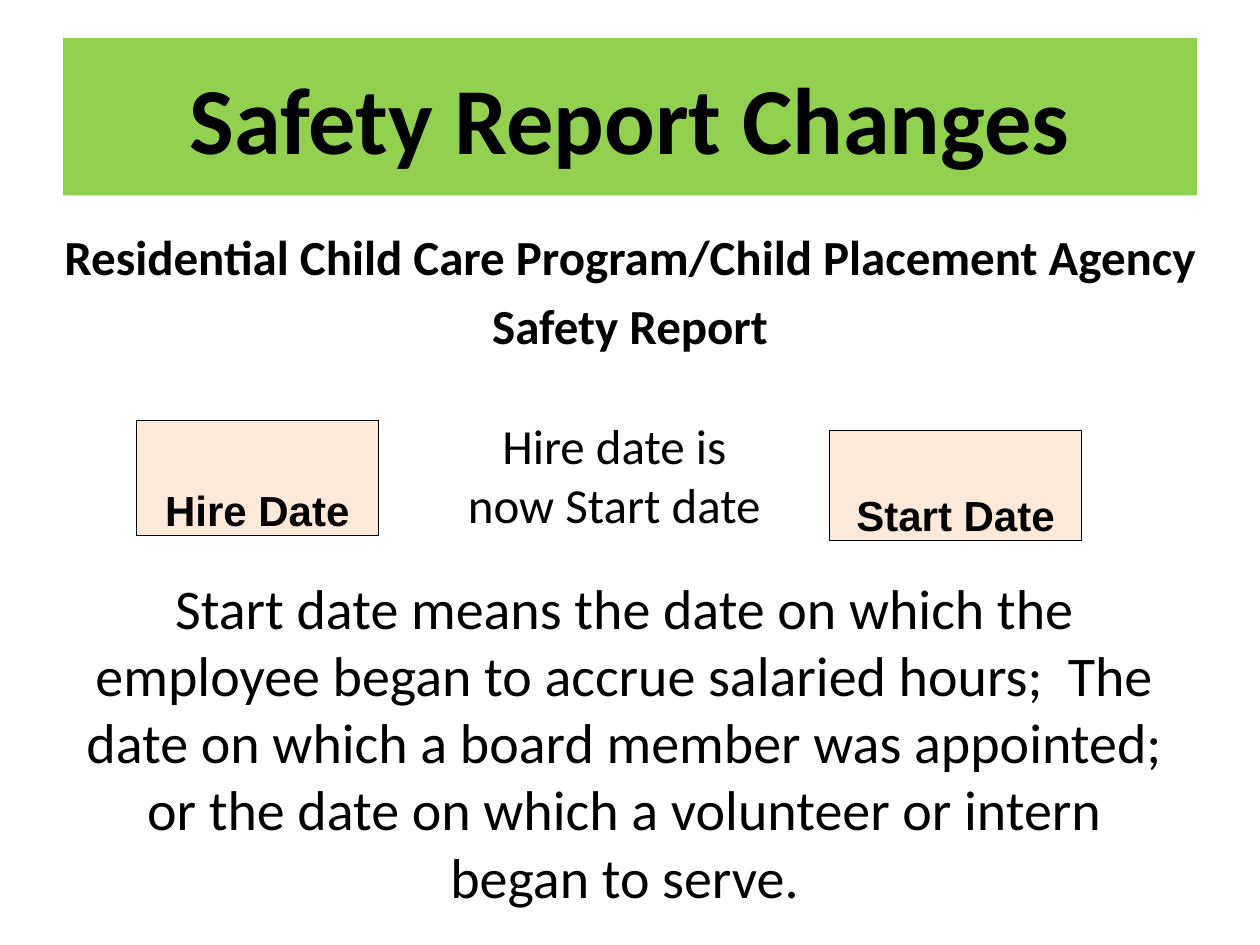
from lxml import etree
from pptx import Presentation
from pptx.dml.color import RGBColor
from pptx.enum.text import MSO_ANCHOR, MSO_AUTO_SIZE, PP_ALIGN
from pptx.oxml.ns import qn
from pptx.util import Inches, Pt

CENTER = PP_ALIGN.CENTER
MIDDLE, BOTTOM = MSO_ANCHOR.MIDDLE, MSO_ANCHOR.BOTTOM
NO_FIT, GROW = MSO_AUTO_SIZE.NONE, MSO_AUTO_SIZE.SHAPE_TO_FIT_TEXT

# Grid of 120 columns by 90 rows
WIDTH, HEIGHT = Inches(10), Inches(7.5)
COL, ROW = WIDTH / 120, HEIGHT / 90

BLACK, GREEN, PEACH = "000000", "92D050", "FDE9D9"
TITLE_FONT = {"name": "Calibri", "size": Pt(54), "bold": True}
HEADING_FONT = {"name": "Calibri", "size": Pt(28), "bold": True}
NOTE_FONT = {"name": "Calibri", "size": Pt(28)}
DEFINITION_FONT = {"name": "Calibri", "size": Pt(32)}
LABEL_FONT = {"name": "Arial", "size": Pt(24), "bold": True}


def rgb(value):
    return RGBColor.from_string(value)


def grid(col, row, cols, rows):
    return round(col * COL), round(row * ROW), round(cols * COL), round(rows * ROW)


def set_fill(target, color):
    target.fill.solid()
    target.fill.fore_color.rgb = rgb(color)


def place(sp, box):
    for name, value in zip(("left", "top", "width", "height"), box):
        setattr(sp, name, value)


def write(tf, lines, font):
    for i, line in enumerate(lines):
        p = tf.paragraphs[0] if i == 0 else tf.add_paragraph()
        p.alignment = CENTER
        r = p.add_run()
        r.text = line
        for name, value in font.items():
            setattr(r.font, name, value)
        r.font.color.rgb = rgb(BLACK)


def add_title(slide, box, text):
    sp = slide.shapes.title
    place(sp, box)
    set_fill(sp, GREEN)
    tf = sp.text_frame
    tf.auto_size, tf.vertical_anchor = NO_FIT, MIDDLE
    write(tf, [text], TITLE_FONT)


def add_heading(slide, box, lines):
    sp = slide.placeholders[1]
    place(sp, box)
    tf = sp.text_frame
    tf.auto_size = NO_FIT
    write(tf, lines, HEADING_FONT)
    for p in tf.paragraphs:
        p.space_before = Pt(5.6)
        pPr = p._p.get_or_add_pPr()
        pPr.set("marL", "0")
        pPr.set("indent", "0")
        etree.SubElement(pPr, qn("a:buNone"))


def add_text(slide, box, text, font):
    tf = slide.shapes.add_textbox(*box).text_frame
    tf.word_wrap, tf.auto_size = True, GROW
    write(tf, [text], font)


def add_borders(cell, color, width):
    tcPr = cell._tc.get_or_add_tcPr()
    for i, side in enumerate(("lnL", "lnR", "lnT", "lnB")):
        ln = etree.Element(qn(f"a:{side}"), w=str(width))
        fill = etree.SubElement(ln, qn("a:solidFill"))
        etree.SubElement(fill, qn("a:srgbClr"), val=color)
        tcPr.insert(i, ln)


def add_label(slide, box, text):
    table = slide.shapes.add_table(1, 1, *box).table
    table.first_row = table.horz_banding = False
    cell = table.cell(0, 0)
    cell.vertical_anchor = BOTTOM
    cell.margin_left = cell.margin_right = cell.margin_top = Inches(0.01)
    cell.margin_bottom = 0
    set_fill(cell, PEACH)
    add_borders(cell, BLACK, Pt(0.5))
    write(cell.text_frame, [text], LABEL_FONT)


def main():
    prs = Presentation()
    prs.slide_width, prs.slide_height = WIDTH, HEIGHT
    slide = prs.slides.add_slide(prs.slide_layouts[1])

    # Title band and report name
    add_title(slide, grid(6, 3.6, 108, 15), "Safety Report Changes")
    add_heading(slide, grid(3, 21, 114, 13), [
        "Residential Child Care Program/Child Placement Agency",
        "Safety Report",
    ])

    # Definition
    add_text(slide, grid(6, 54, 107, 33.5),
             "Start date means the date on which the employee began to accrue "
             "salaried hours;  The date on which a board member was appointed; "
             "or the date on which a volunteer or intern began to serve.",
             DEFINITION_FONT)

    # Old label, change note, new label
    add_text(slide, grid(43, 39, 31, 12.5), "Hire date is now Start date", NOTE_FONT)
    add_label(slide, grid(13, 40, 23, 11), "Hire Date")
    add_label(slide, grid(79, 41, 24, 10.5), "Start Date")

    prs.save("out.pptx")


if __name__ == "__main__":
    main()
